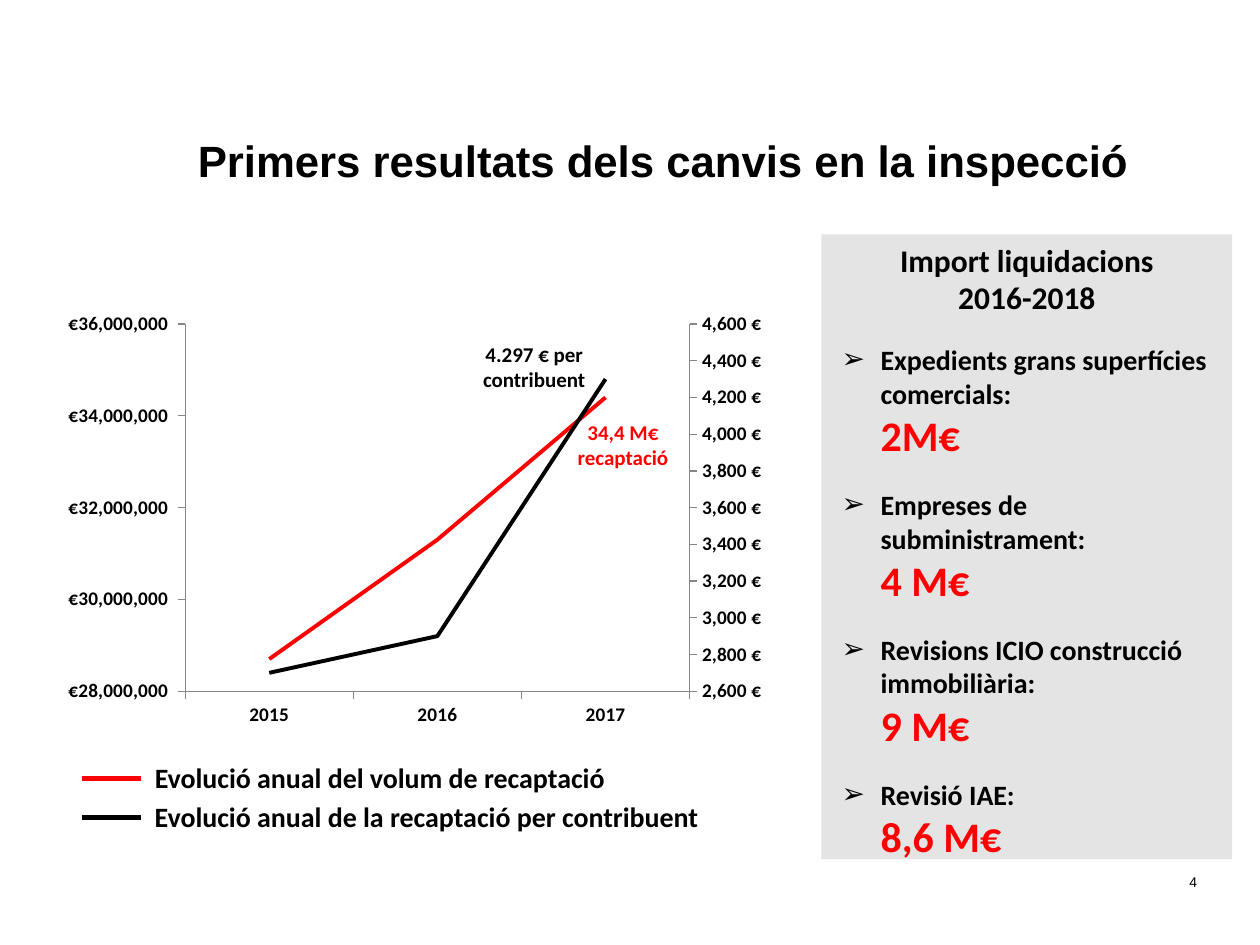
from copy import deepcopy

from lxml import etree
from pptx import Presentation
from pptx.chart.data import CategoryChartData
from pptx.dml.color import RGBColor
from pptx.enum.chart import XL_CHART_TYPE, XL_TICK_MARK
from pptx.enum.shapes import MSO_CONNECTOR, MSO_SHAPE
from pptx.enum.text import MSO_ANCHOR, PP_ALIGN
from pptx.oxml.ns import qn
from pptx.util import Inches, Pt

LINE_CHART = XL_CHART_TYPE.LINE
TICK_OUT, TICK_NONE = XL_TICK_MARK.OUTSIDE, XL_TICK_MARK.NONE
STRAIGHT, RECTANGLE = MSO_CONNECTOR.STRAIGHT, MSO_SHAPE.RECTANGLE
TOP, MIDDLE = MSO_ANCHOR.TOP, MSO_ANCHOR.MIDDLE
LEFT, CENTER, RIGHT = PP_ALIGN.LEFT, PP_ALIGN.CENTER, PP_ALIGN.RIGHT
BLACK, RED, PANEL, AXIS = "000000", "FF0000", "E4E4E4", "868686"


def color(value):
    return RGBColor.from_string(value)


class SlideBuilder:
    body_font = "Calibri"
    title_font = "Arial"
    columns, rows = 100, 75

    def __init__(self, deck):
        self.deck = deck
        self.slide = deck.slides.add_slide(deck.slide_layouts[6])

    def grid(self, column, row, width, height):
        across = self.deck.slide_width / self.columns
        down = self.deck.slide_height / self.rows
        return (round(column * across), round(row * down),
                round(width * across), round(height * down))

    def style(self, font, size, shade, name=None):
        font.name = name or self.body_font
        font.size = Pt(size)
        font.color.rgb = color(shade)

    def add_span(self, para, text, size, shade=BLACK, bold=True, name=None):
        span = para.add_run()
        span.text = text
        span.font.bold = bold
        self.style(span.font, size, shade, name)
        return span

    def frame(self, area, wrap=True, anchor=TOP):
        frame = self.slide.shapes.add_textbox(*self.grid(*area)).text_frame
        frame.word_wrap = wrap
        frame.vertical_anchor = anchor
        return frame

    def text(self, area, lines, size, shade=BLACK, align=CENTER, wrap=True,
             bold=True, name=None, anchor=TOP):
        frame = self.frame(area, wrap, anchor)
        for index, line in enumerate(lines):
            para = frame.add_paragraph() if index else frame.paragraphs[0]
            para.alignment = align
            self.add_span(para, line, size, shade, bold, name)

    def bullets(self, area, items, gap):
        frame = self.frame(area)
        for index, (label, amount) in enumerate(items):
            para = frame.add_paragraph() if index else frame.paragraphs[0]
            para.space_before = Pt(gap if index else 0)
            properties = para._p.get_or_add_pPr()
            properties.set("marL", str(Inches(0.39)))
            properties.set("indent", str(Inches(-0.31)))
            etree.SubElement(properties, qn("a:buFont"), typeface="Arial")
            etree.SubElement(properties, qn("a:buChar"), char="➢")
            span = self.add_span(para, label, 16)
            para.add_line_break()
            para._p[-1].append(deepcopy(span._r.rPr))
            self.add_span(para, amount, 24, RED)

    def panel(self, area, fill):
        shape = self.slide.shapes.add_shape(RECTANGLE, *self.grid(*area))
        shape.shadow.inherit = False
        shape.fill.solid()
        shape.fill.fore_color.rgb = color(fill)
        shape.line.fill.background()

    def legend_entry(self, row, label, width, shade):
        left, top, length, _ = self.grid(6.5, row, 4.7, 0)
        line = self.slide.shapes.add_connector(
            STRAIGHT, left, top, left + length, top)
        line.line.color.rgb = color(shade)
        line.line.width = Pt(3)
        etree.SubElement(line._element.spPr, qn("a:effectLst"))
        self.text((11.3, row - 1.95, width, 3.7), [label], 16,
                  align=LEFT, wrap=False)

    def format_axis(self, axis):
        axis.has_major_gridlines = False
        axis.major_tick_mark = TICK_OUT
        axis.minor_tick_mark = TICK_NONE
        axis.format.line.color.rgb = color(AXIS)
        axis.format.line.width = Pt(0.75)
        self.style(axis.tick_labels.font, 11, BLACK)
        axis.tick_labels.font.bold = True

    def format_values(self, axis, low, high, step, pattern):
        axis.minimum_scale, axis.maximum_scale = low, high
        axis.major_unit = step
        axis.tick_labels.number_format = pattern
        axis.tick_labels.number_format_is_linked = False

    def add_right_axis(self, chart):
        plot_area = chart._chartSpace.chart.plotArea
        first = plot_area.find(qn("c:lineChart"))
        second = deepcopy(first)
        first.remove(first.findall(qn("c:ser"))[1])
        second.remove(second.findall(qn("c:ser"))[0])
        first.addnext(second)
        category = plot_area.find(qn("c:catAx"))
        value = plot_area.find(qn("c:valAx"))
        right, hidden = deepcopy(value), deepcopy(category)
        value.addnext(right)
        right.addnext(hidden)
        names = {category.find(qn("c:axId")).get("val"): "5001",
                 value.find(qn("c:axId")).get("val"): "5002"}
        for part in (second, right, hidden):
            for tag in ("c:axId", "c:crossAx"):
                for item in part.findall(qn(tag)):
                    item.set("val", names[item.get("val")])
        hidden.find(qn("c:delete")).set("val", "1")
        right.find(qn("c:axPos")).set("val", "r")
        right.find(qn("c:crosses")).set("val", "max")

    def place_plot(self, chart, **shares):
        plot_area = chart._chartSpace.chart.plotArea
        for old in plot_area.findall(qn("c:layout")):
            plot_area.remove(old)
        layout = etree.Element(qn("c:layout"))
        manual = etree.SubElement(layout, qn("c:manualLayout"))
        settings = {"layoutTarget": "inner", "xMode": "edge", "yMode": "edge"}
        for tag, value in {**settings, **shares}.items():
            etree.SubElement(manual, qn("c:" + tag), val=str(value))
        plot_area.insert(0, layout)

    def line_chart(self, area, categories, series, left_scale, right_scale):
        data = CategoryChartData()
        data.categories = categories
        for name, values, _ in series:
            data.add_series(name, values)
        chart = self.slide.shapes.add_chart(
            LINE_CHART, *self.grid(*area), data).chart
        chart.has_legend = chart.has_title = False
        self.style(chart.font, 10, BLACK)
        chart.plots[0].vary_by_categories = False
        for line, (_, _, shade) in zip(chart.plots[0].series, series):
            line.smooth = False
            line.format.line.color.rgb = color(shade)
            line.format.line.width = Pt(2.25)
        for axis in (chart.category_axis, chart.value_axis):
            self.format_axis(axis)
        self.format_values(chart.value_axis, *left_scale)
        self.add_right_axis(chart)
        self.format_values(chart.value_axis, *right_scale)
        self.place_plot(chart, x=0.18, y=0.05, w=0.7, h=0.85)


def main():
    deck = Presentation()
    deck.slide_width, deck.slide_height = Inches(10), Inches(7.5)
    page = SlideBuilder(deck)
    page.text((72.7, 68, 23.3, 4), ["4"], 8, align=RIGHT, bold=False,
              name=page.title_font, anchor=MIDDLE)
    page.text((7.6, 10.1, 90, 5.5),
              ["Primers resultats dels canvis en la inspecció"], 25,
              name=page.title_font)
    page.legend_entry(61.8, "Evolució anual del volum de recaptació", 38.2, RED)
    page.legend_entry(64.9, "Evolució anual de la recaptació per contribuent",
                      45.7, BLACK)
    page.line_chart(
        (4.4, 24, 57.2, 34.3), ["2015", "2016", "2017"],
        [("Series 1", (28700000, 31300000, 34400000), RED),
         ("Series 2", (2700, 2900, 4300), BLACK)],
        (28000000, 36000000, 2000000, '"€"#,##0_);\\("€"#,##0\\)'),
        (2600, 4600, 200, '#,##0 "€"'))
    page.text((37.3, 26.6, 10.2, 5), ["4.297 € per contribuent"], 12)
    page.text((44.8, 32.8, 9.3, 5), ["34,4 M€", "recaptació"], 12, RED,
              wrap=False)
    page.panel((65.2, 18.6, 32.6, 49.6), PANEL)
    page.bullets((65, 26.7, 33.1, 41.5), [
        ("Expedients grans superfícies comercials:", "2M€"),
        ("Empreses de subministrament:", "4 M€"),
        ("Revisions ICIO construcció immobiliària:", "9 M€"),
        ("Revisió IAE:", "8,6 M€")], 15.6)
    page.text((70.4, 18.6, 22.2, 7.1), ["Import liquidacions 2016-2018"], 18)
    deck.save("out.pptx")


if __name__ == "__main__":
    main()
